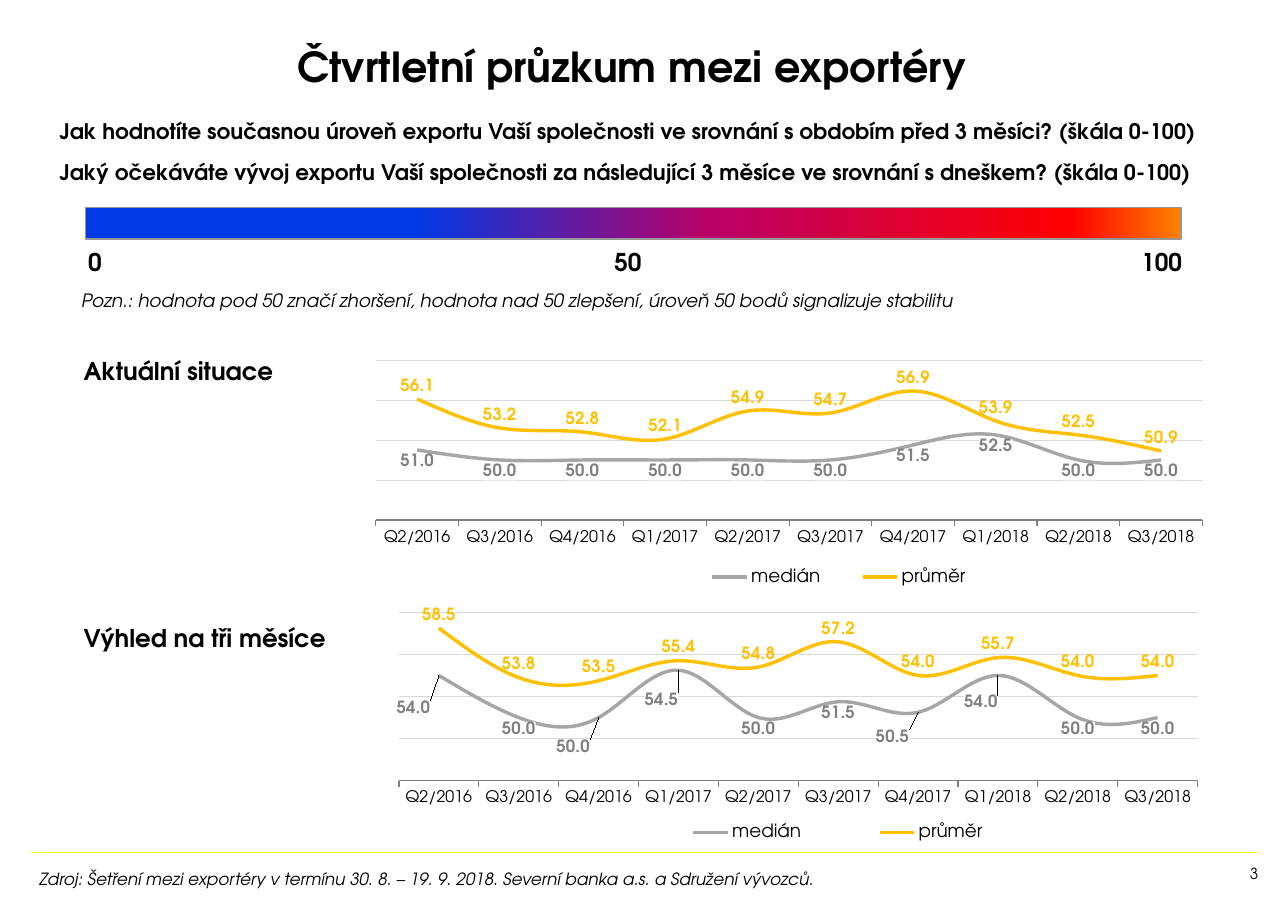
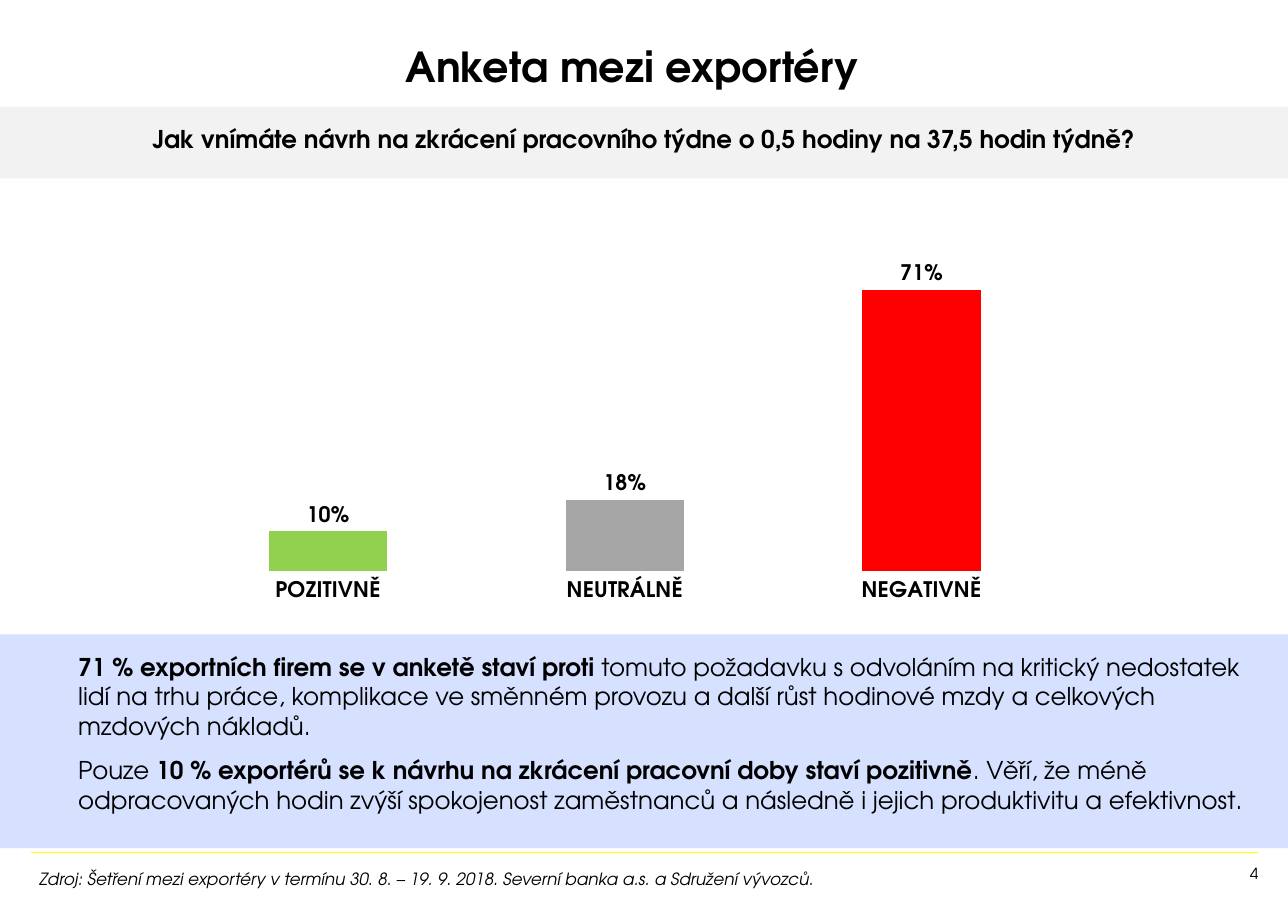
import copy

import pptx
import pptx.chart.data
import pptx.dml.color
import pptx.enum.chart
import pptx.enum.shapes
import pptx.enum.text
import pptx.oxml
import pptx.oxml.ns
import pptx.util

Inches = pptx.util.Inches
Pt = pptx.util.Pt
color = pptx.dml.color.RGBColor.from_string
Align = pptx.enum.text.PP_ALIGN
ChartType = pptx.enum.chart.XL_CHART_TYPE
LabelPosition = pptx.enum.chart.XL_LABEL_POSITION


class Theme:
    font = "TeX Gyre Adventor"
    text, white, footer_line = "000000", "FFFFFF", "FFFF00"
    question_band, comment_band = "F2F2F2", "D6E0FF"
    gray, gold, green, red = "A6A6A6", "FFC000", "92D050", "FF0000"
    gray_label, grid, axis, outline = "808080", "D9D9D9", "808080", "969696"
    scale_stops = [(30, "0039E5"), (57, "BA0066"), (90, "FF0000"), (100, "FF8200")]
    title, heading, question, note = 27, 16, 14, 12
    source, chart_label, chart_axis, number = 11, 11, 10.5, 10
    body_insets = (0.12, 0.16, 0.12, 0)


LAYOUT = (
    f'<c:layout {pptx.oxml.ns.nsdecls("c")}><c:manualLayout>{{target}}'
    '<c:xMode val="{mode}"/><c:yMode val="{mode}"/><c:x val="{x}"/><c:y val="{y}"/>'
    "{size}</c:manualLayout></c:layout>"
)
SIZE = '<c:w val="{}"/><c:h val="{}"/>'
WHITE_FILL = (
    f'<c:spPr {pptx.oxml.ns.nsdecls("c", "a")}><a:solidFill>'
    f'<a:srgbClr val="{Theme.white}"/></a:solidFill></c:spPr>'
)


def add_text(slide, box, paragraphs, size, bold=False, italic=False, align=Align.LEFT,
             insets=Theme.body_insets, middle=False, fill=None):
    """Each paragraph is a string or a list of (text, bold) runs."""
    shape = slide.shapes.add_textbox(*map(Inches, box))
    if fill:
        shape.fill.solid()
        shape.fill.fore_color.rgb = color(fill)
    frame = shape.text_frame
    frame.word_wrap = True
    frame.margin_left, frame.margin_top, frame.margin_right, frame.margin_bottom = map(Inches, insets)
    anchors = pptx.enum.text.MSO_ANCHOR
    frame.vertical_anchor = anchors.MIDDLE if middle else anchors.TOP
    for index, content in enumerate(paragraphs):
        paragraph = frame.add_paragraph() if index else frame.paragraphs[0]
        paragraph.alignment = align
        if index:
            paragraph.space_before = Pt(10)
        runs = [(content, bold)] if isinstance(content, str) else content
        for text, run_bold in runs:
            run = paragraph.add_run()
            run.text = text
            run.font.name, run.font.size = Theme.font, Pt(size)
            run.font.bold, run.font.italic = run_bold, italic
            run.font.color.rgb = color(Theme.text)


def add_chart(slide, kind, box, plot_box, categories, series, number_format, scale, axis_size):
    data = pptx.chart.data.CategoryChartData(number_format=number_format)
    data.categories = categories
    for name, values in series:
        data.add_series(name, values)
    chart = slide.shapes.add_chart(kind, *map(Inches, box), data).chart
    chart.has_title = chart.has_legend = False
    chart.font.name, chart.font.size = Theme.font, Pt(Theme.note)
    chart.font.color.rgb = color(Theme.text)
    chart.plots[0].vary_by_categories = False
    values = chart.value_axis
    values.minimum_scale, values.maximum_scale, values.major_unit = scale
    values.visible = values.has_major_gridlines = False
    chart.category_axis.tick_labels.font.size = Pt(axis_size)
    # Fixed plot area
    x, y, width, height = plot_box
    plot_area = chart.plots[0]._element.getparent()
    for layout in plot_area.xpath("c:layout"):
        plot_area.remove(layout)
    plot_area.insert(0, pptx.oxml.parse_xml(LAYOUT.format(
        target='<c:layoutTarget val="inner"/>', mode="edge", x=x, y=y, size=SIZE.format(width, height))))
    return chart


presentation = pptx.Presentation()
presentation.slide_width, presentation.slide_height = Inches(11.69), Inches(8.27)

# Shared frame: title, footer line, source, slide number
slides = []
for number, title in [(3, "Čtvrtletní průzkum mezi exportéry"), (4, "Anketa mezi exportéry")]:
    slide = presentation.slides.add_slide(presentation.slide_layouts[6])
    slides.append(slide)
    line = slide.shapes.add_connector(pptx.enum.shapes.MSO_CONNECTOR.STRAIGHT,
                                      Inches(0.28), Inches(7.74), Inches(11.42), Inches(7.74))
    line.line.color.rgb = color(Theme.footer_line)
    line.line.width = Pt(1)
    line._element.spPr.append(pptx.oxml.parse_xml(f'<a:effectLst {pptx.oxml.ns.nsdecls("a")}/>'))
    add_text(slide, (0.64, 0.18, 10.19, 0.83), [title], Theme.title, bold=True,
             align=Align.CENTER, insets=(0, 0, 0, 0), middle=True)
    add_text(slide, (0.26, 7.84, 9.94, 0.29),
             ["Zdroj: Šetření mezi exportéry v termínu 30. 8. – 19. 9. 2018. "
              "Severní banka a.s. a Sdružení vývozců."],
             Theme.source, italic=True, insets=(0.1, 0.05, 0.1, 0.05))
    add_text(slide, (10.42, 7.85, 1, 0.3), [str(number)], Theme.number,
             align=Align.RIGHT, insets=(0, 0, 0, 0))
survey, poll = slides

# Survey: questions
add_text(survey, (0.42, 0.91, 10.86, 0.95),
         ["Jak hodnotíte současnou úroveň exportu Vaší společnosti ve srovnání s obdobím "
          "před 3 měsíci? (škála 0-100)",
          "Jaký očekáváte vývoj exportu Vaší společnosti za následující 3 měsíce ve srovnání "
          "s dneškem? (škála 0-100)"],
         Theme.question, bold=True)

# Survey: colour scale with its values
scale_bar = survey.shapes.add_shape(pptx.enum.shapes.MSO_SHAPE.RECTANGLE,
                                    Inches(0.78), Inches(1.88), Inches(9.94), Inches(0.29))
scale_bar.shadow.inherit = False
scale_bar.line.color.rgb = color(Theme.outline)
scale_bar.line.width = Pt(0.75)
scale_bar.fill.gradient()
scale_bar.fill.gradient_angle = 0
stop_list = scale_bar._element.spPr.xpath("a:gradFill/a:gsLst")[0]
for stop in list(stop_list):
    stop_list.remove(stop)
for percent, stop_color in Theme.scale_stops:
    stop_list.append(pptx.oxml.parse_xml(
        f'<a:gs {pptx.oxml.ns.nsdecls("a")} pos="{percent * 1000}"><a:srgbClr val="{stop_color}"/></a:gs>'))
for text, left, align in [("0", 0.8, Align.LEFT), ("50", 5.2, Align.CENTER), ("100", 9.73, Align.RIGHT)]:
    add_text(survey, (left, 2.24, 1, 0.28), [text], Theme.heading, bold=True,
             align=align, insets=(0, 0, 0, 0))
add_text(survey, (0.64, 2.58, 10.84, 0.3),
         ["Pozn.: hodnota pod 50 značí zhoršení, hodnota nad 50 zlepšení, "
          "úroveň 50 bodů signalizuje stabilitu"],
         Theme.note, italic=True, insets=(0.1, 0.05, 0.1, 0.05))

# Survey: two line charts; offsets move single median labels
quarters = ["Q2/2016", "Q3/2016", "Q4/2016", "Q1/2017", "Q2/2017",
            "Q3/2017", "Q4/2017", "Q1/2018", "Q2/2018", "Q3/2018"]
line_charts = [
    dict(heading="Aktuální situace", heading_top=3.07, box=(3.1, 3.07, 7.99, 2.45),
         plot_height=0.593, legend=(0.38, 0.83, 0.37, 0.11), offsets={},
         median=[51, 50, 50, 50, 50, 50, 51.5, 52.5, 50, 50],
         mean=[56.1, 53.2, 52.8, 52.1, 54.9, 54.7, 56.9, 53.9, 52.5, 50.9]),
    dict(heading="Výhled na tři měsíce", heading_top=5.5, box=(3.32, 5.37, 7.72, 2.34),
         plot_height=0.653, legend=(0.3, 0.88, 0.51, 0.11),
         offsets={0: (-0.03, 0.08), 2: (-0.03, 0.07), 3: (-0.02, 0.07),
                  6: (-0.03, 0.05), 7: (-0.02, 0.06)},
         median=[54, 50, 50, 54.5, 50, 51.5, 50.5, 54, 50, 50],
         mean=[58.5, 53.8, 53.5, 55.4, 54.8, 57.2, 54, 55.7, 54, 54]),
]
for item in line_charts:
    add_text(survey, (0.64, item["heading_top"], 2.6, 0.5), [item["heading"]], Theme.heading, bold=True)
    chart = add_chart(survey, ChartType.LINE, item["box"], (0.039, 0.081, 0.939, item["plot_height"]),
                      quarters, [("medián", item["median"]), ("průměr", item["mean"])],
                      "0.0", (44, 60, 4), Theme.chart_axis)
    chart.value_axis.has_major_gridlines = True
    grid_line = chart.value_axis.major_gridlines.format.line
    grid_line.color.rgb, grid_line.width = color(Theme.grid), Pt(0.5)
    chart.category_axis.format.line.color.rgb = color(Theme.axis)
    chart.category_axis.major_tick_mark = pptx.enum.chart.XL_TICK_MARK.OUTSIDE

    chart.has_legend = True
    chart.legend.position = pptx.enum.chart.XL_LEGEND_POSITION.BOTTOM
    chart.legend.include_in_layout = False
    legend = chart.legend._element
    for layout in legend.xpath("c:layout"):
        legend.remove(layout)
    x, y, width, height = item["legend"]
    legend.xpath("c:legendPos")[0].addnext(pptx.oxml.parse_xml(LAYOUT.format(
        target="", mode="edge", x=x, y=y, size=SIZE.format(width, height))))

    styles = [(Theme.gray, Theme.gray_label, LabelPosition.BELOW),
              (Theme.gold, Theme.gold, LabelPosition.ABOVE)]
    for series, (line_color, label_color, position) in zip(chart.plots[0].series, styles):
        series.smooth = True
        series.marker.style = pptx.enum.chart.XL_MARKER_STYLE.NONE
        series.format.line.color.rgb = color(line_color)
        series.format.line.width = Pt(2.25)
        labels = series.data_labels
        labels.show_value = True
        labels.position = position
        labels.number_format, labels.number_format_is_linked = "0.0", False
        labels.font.size, labels.font.bold = Pt(Theme.chart_label), True
        labels.font.color.rgb = color(label_color)

    # White label backgrounds and moved labels of the median
    median = chart.plots[0].series[0]
    labels_element = median.data_labels._element
    labels_element.xpath("c:txPr")[0].addprevious(pptx.oxml.parse_xml(WHITE_FILL))
    label_format = labels_element.xpath("c:numFmt | c:spPr | c:txPr")
    for index, (x, y) in item["offsets"].items():
        median.points[index].data_label.position = LabelPosition.BELOW
        label = labels_element.xpath(f"c:dLbl[c:idx/@val='{index}']")[0]
        for old in label.xpath("c:spPr | c:txPr"):
            label.remove(old)
        layout = pptx.oxml.parse_xml(LAYOUT.format(target="", mode="factor", x=x, y=y, size=""))
        label[1:1] = [layout] + [copy.deepcopy(part) for part in label_format]

# Poll: question band
add_text(poll, (0, 0.97, 11.69, 0.65),
         ["Jak vnímáte návrh na zkrácení pracovního týdne o 0,5 hodiny na 37,5 hodin týdně?"],
         Theme.heading, bold=True, align=Align.CENTER, fill=Theme.question_band)

# Poll: comment band
add_text(poll, (0, 5.76, 11.69, 1.94),
         [[("71 % exportních firem se v anketě staví proti", True),
           (" tomuto požadavku s odvoláním na kritický nedostatek lidí na trhu práce, komplikace "
            "ve směnném provozu a další růst hodinové mzdy a celkových mzdových nákladů.", False)],
          [("Pouze ", False),
           ("10 % exportérů se k návrhu na zkrácení pracovní doby staví pozitivně", True),
           (". Věří, že méně odpracovaných hodin zvýší spokojenost zaměstnanců a následně i jejich "
            "produktivitu a efektivnost.", False)]],
         Theme.heading, insets=(0.71, 0.16, 0.12, 0), fill=Theme.comment_band)

# Poll: answers
chart = add_chart(poll, ChartType.COLUMN_CLUSTERED, (1.38, 1.52, 9.32, 4.24),
                  (0.027, 0.016, 0.867, 0.848), ["POZITIVNĚ", "NEUTRÁLNĚ", "NEGATIVNĚ"],
                  [("Series 1", [0.1, 0.18, 0.71])], "0%", (0, 1, 0.2), Theme.question)
chart.category_axis.tick_labels.font.bold = True
chart.category_axis.format.line.fill.background()
chart.plots[0].gap_width = 150
answers = chart.plots[0].series[0]
for index, bar_color in enumerate([Theme.green, Theme.gray, Theme.red]):
    fill = answers.points[index].format.fill
    fill.solid()
    fill.fore_color.rgb = color(bar_color)
labels = answers.data_labels
labels.show_value = True
labels.position = LabelPosition.OUTSIDE_END
labels.number_format, labels.number_format_is_linked = "0%", False
labels.font.size, labels.font.bold = Pt(Theme.question), True

presentation.save("out.pptx")
